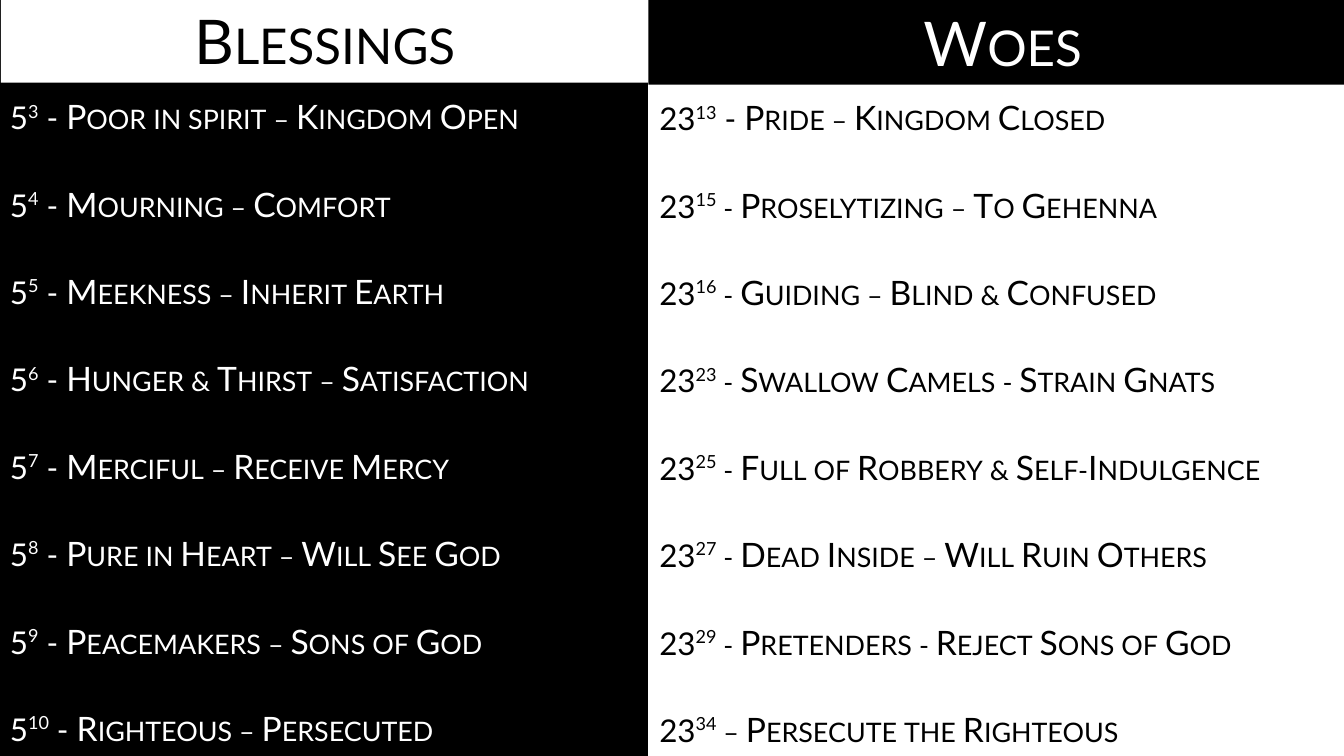
from pptx import Presentation
from pptx.dml.color import RGBColor
from pptx.enum.shapes import MSO_SHAPE as Shape
from pptx.enum.text import MSO_ANCHOR as Anchor, MSO_AUTO_SIZE as AutoSize, PP_ALIGN as Align
from pptx.util import Inches, Pt

BLACK = RGBColor(0x00, 0x00, 0x00)
WHITE = RGBColor(0xFF, 0xFF, 0xFF)
FONT = "Lato"
HEADING_SIZE, VERSE_SIZE, MEANING_SIZE = 44, 28, 24
VERSE_GAP = 28.8
DIVIDE = 6.43
HEADER_HEIGHT = 0.84

BLESSINGS = [
    ("3", " - ", "Poor in spirit – Kingdom Open"),
    ("4", " - ", "Mourning – Comfort"),
    ("5", " - ", "Meekness – Inherit Earth"),
    ("6", " - ", "Hunger & Thirst – Satisfaction"),
    ("7", " - ", "Merciful – Receive Mercy"),
    ("8", " - ", "Pure in Heart – Will See God"),
    ("9", " - ", "Peacemakers – Sons of God"),
    ("10", " - ", "Righteous – Persecuted"),
]
WOES = [
    ("13", " - ", "Pride – Kingdom Closed"),
    ("15", " - ", "Proselytizing – To Gehenna"),
    ("16", " - ", "Guiding – Blind & Confused"),
    ("23", " - ", "Swallow Camels - Strain Gnats"),
    ("25", " - ", "Full of Robbery & Self-Indulgence"),
    ("27", " - ", "Dead Inside – Will Ruin Others"),
    ("29", " - ", "Pretenders - Reject Sons of God"),
    ("34", " – ", "Persecute the Righteous"),
]


def add_panel(slide, left, top, width, height, fill):
    panel = slide.shapes.add_shape(
        Shape.RECTANGLE, Inches(left), Inches(top), Inches(width), Inches(height))
    panel.shadow.inherit = False
    panel.fill.solid()
    panel.fill.fore_color.rgb = fill
    panel.line.fill.background()
    return panel


def style_run(run, size, color, raised=False):
    run.font.name = FONT
    run.font.size = Pt(size)
    run.font.color.rgb = color
    properties = run._r.get_or_add_rPr()
    properties.set("cap", "small")
    if raised:
        properties.set("baseline", "30000")


def add_heading(slide, title, left, top, width, fill, color):
    heading = add_panel(slide, left, top, width, HEADER_HEIGHT, fill)
    frame = heading.text_frame
    frame.text = title
    frame.word_wrap = True
    frame.auto_size = AutoSize.SHAPE_TO_FIT_TEXT
    frame.vertical_anchor = Anchor.MIDDLE
    paragraph = frame.paragraphs[0]
    paragraph.alignment = Align.CENTER
    style_run(paragraph.runs[0], HEADING_SIZE, color)


def add_verses(slide, chapter, entries, large_dashes, left, top, width, color):
    verses = slide.shapes.add_textbox(
        Inches(left), Inches(top), Inches(width), Inches(6.7))
    frame = verses.text_frame
    frame.word_wrap = True
    frame.auto_size = AutoSize.SHAPE_TO_FIT_TEXT
    for index, (verse, dash, meaning) in enumerate(entries):
        paragraph = frame.add_paragraph() if index else frame.paragraphs[0]
        if index:
            paragraph.space_before = Pt(VERSE_GAP)
        dash_size = VERSE_SIZE if index < large_dashes else MEANING_SIZE
        parts = [(chapter, VERSE_SIZE, False), (verse, VERSE_SIZE, True),
                 (dash, dash_size, False), (meaning, MEANING_SIZE, False)]
        for text, size, raised in parts:
            run = paragraph.add_run()
            run.text = text
            style_run(run, size, color, raised)


def main():
    presentation = Presentation()
    presentation.slide_width = Inches(13.33)
    presentation.slide_height = Inches(7.5)
    slide = presentation.slides.add_slide(presentation.slide_layouts[6])
    slide.background.fill.solid()
    slide.background.fill.fore_color.rgb = BLACK

    woes_panel = add_panel(slide, DIVIDE, 0, 7.01, 7.52, WHITE)
    woes_panel.line.color.rgb = WHITE
    woes_panel.line.width = Pt(1)
    add_heading(slide, "Blessings", 0.01, -0.02, DIVIDE - 0.01, WHITE, BLACK)
    add_heading(slide, "Woes", DIVIDE, 0, 7.03, BLACK, WHITE)
    add_verses(slide, "23", WOES, 1, 6.44, 0.86, 7.25, BLACK)
    add_verses(slide, "5", BLESSINGS, len(BLESSINGS), 0, 0.85, 6.33, WHITE)
    presentation.save("out.pptx")


if __name__ == "__main__":
    main()
